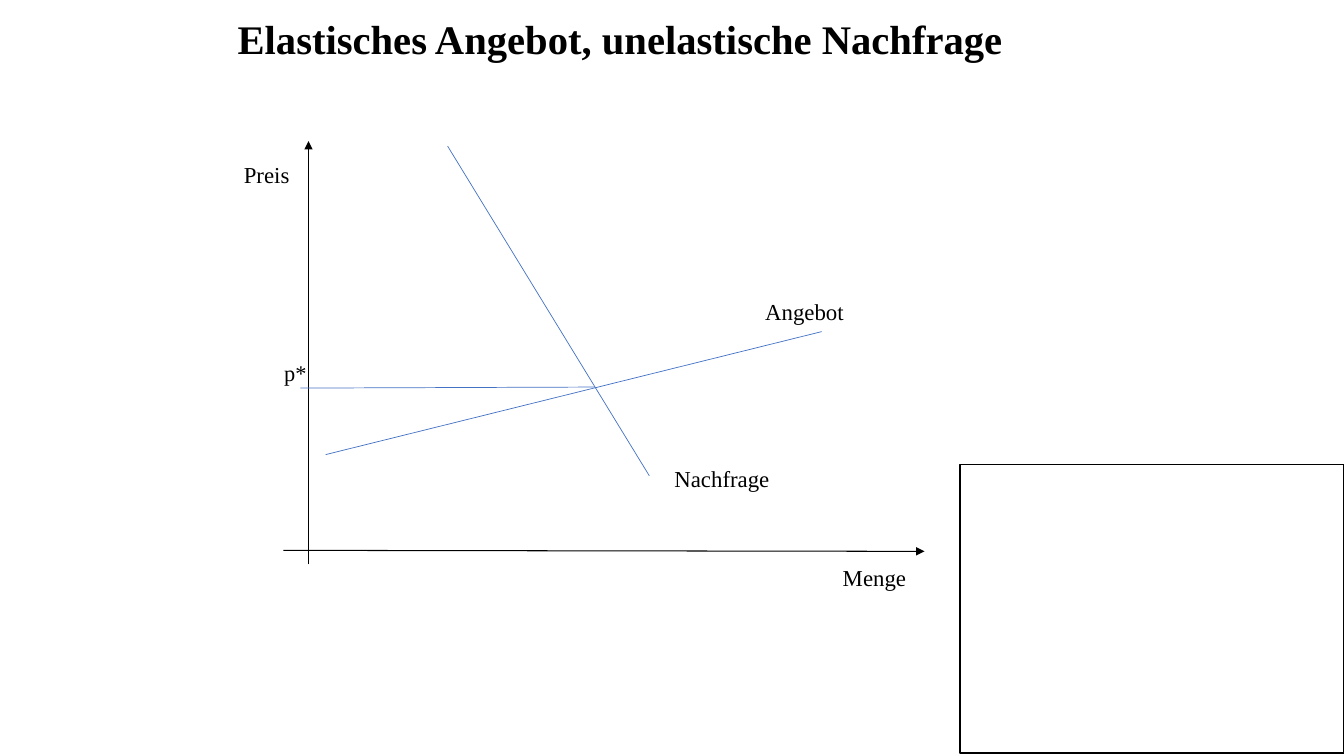
from lxml.etree import SubElement
from pptx import Presentation
from pptx.dml.color import RGBColor
from pptx.enum.shapes import MSO_CONNECTOR, MSO_SHAPE
from pptx.enum.text import MSO_ANCHOR, MSO_AUTO_SIZE, PP_ALIGN
from pptx.oxml.ns import qn
from pptx.util import Inches, Pt

BLACK, BLUE = "000000", "4472C4"


def color(hex_value):
    return RGBColor.from_string(hex_value)


def apply(target, formats):
    """Set each named attribute of the target."""
    for name, value in formats.items():
        setattr(target, name, value)


class MarketSlide:
    font = "Times New Roman"

    def __init__(self, prs):
        self.s = prs.slides.add_slide(prs.slide_layouts[5])

    def add_text(self, tf, text, size, bold=False):
        p = tf.paragraphs[0]
        r = p.add_run()
        r.text = text
        apply(r.font, {"name": self.font, "size": Pt(size), "bold": bold})
        r.font.color.rgb = color(BLACK)
        return p

    def title(self, text, left, top, width, height):
        sp = self.s.shapes.title
        apply(sp, {"left": Inches(left), "top": Inches(top),
                   "width": Inches(width), "height": Inches(height)})
        tf = sp.text_frame
        apply(tf, {"auto_size": MSO_AUTO_SIZE.NONE, "word_wrap": True,
                   "vertical_anchor": MSO_ANCHOR.MIDDLE,
                   "margin_left": Inches(0.09), "margin_right": Inches(0.09),
                   "margin_top": Inches(0.04), "margin_bottom": Inches(0.04)})
        self.add_text(tf, text, 29, bold=True).alignment = PP_ALIGN.CENTER

    def label(self, text, left, top, width, size=16.3):
        sp = self.s.shapes.add_textbox(Inches(left), Inches(top), Inches(width), Inches(0.38))
        apply(sp.text_frame, {"word_wrap": False,
                              "auto_size": MSO_AUTO_SIZE.SHAPE_TO_FIT_TEXT})
        self.add_text(sp.text_frame, text, size)

    def line(self, start, end, hex_value=BLUE, width=0.5):
        cxn = self.s.shapes.add_connector(
            MSO_CONNECTOR.STRAIGHT, *(Inches(v) for v in (*start, *end)))
        cxn.line.color.rgb = color(hex_value)
        cxn.line.width = Pt(width)
        SubElement(cxn.element.spPr, qn("a:effectLst"))
        return cxn

    def axis(self, start, end):
        cxn = self.line(start, end, BLACK, 0.75)
        SubElement(cxn.get_or_add_ln(), qn("a:tailEnd"), type="triangle")

    def frame(self, left, top, width, height):
        sp = self.s.shapes.add_shape(
            MSO_SHAPE.RECTANGLE, *(Inches(v) for v in (left, top, width, height)))
        sp.shadow.inherit = False
        sp.fill.background()
        sp.line.color.rgb = color(BLACK)
        sp.line.width = Pt(1)


def main():
    prs = Presentation()
    apply(prs, {"slide_width": Inches(13.33), "slide_height": Inches(7.5)})
    slide = MarketSlide(prs)
    slide.title("Elastisches Angebot, unelastische Nachfrage", 2, 0.23, 8.31, 0.3)

    slide.axis((3.06, 5.6), (3.06, 1.4))
    slide.axis((2.81, 5.46), (9.17, 5.47))
    slide.label("Preis", 2.32, 1.54, 0.66)
    slide.label("Menge", 8.26, 5.54, 0.85)

    slide.line((3.23, 4.51), (8.15, 3.29))
    slide.line((4.44, 1.45), (6.44, 4.72))
    slide.label("Angebot", 7.49, 2.9, 0.99)
    slide.label("Nachfrage", 6.59, 4.56, 1.15)

    slide.label("p*", 2.72, 3.51, 0.43, size=16)
    slide.line((2.98, 3.85), (5.9, 3.84))
    slide.frame(9.52, 4.61, 3.81, 2.86)
    prs.save("out.pptx")


if __name__ == "__main__":
    main()
